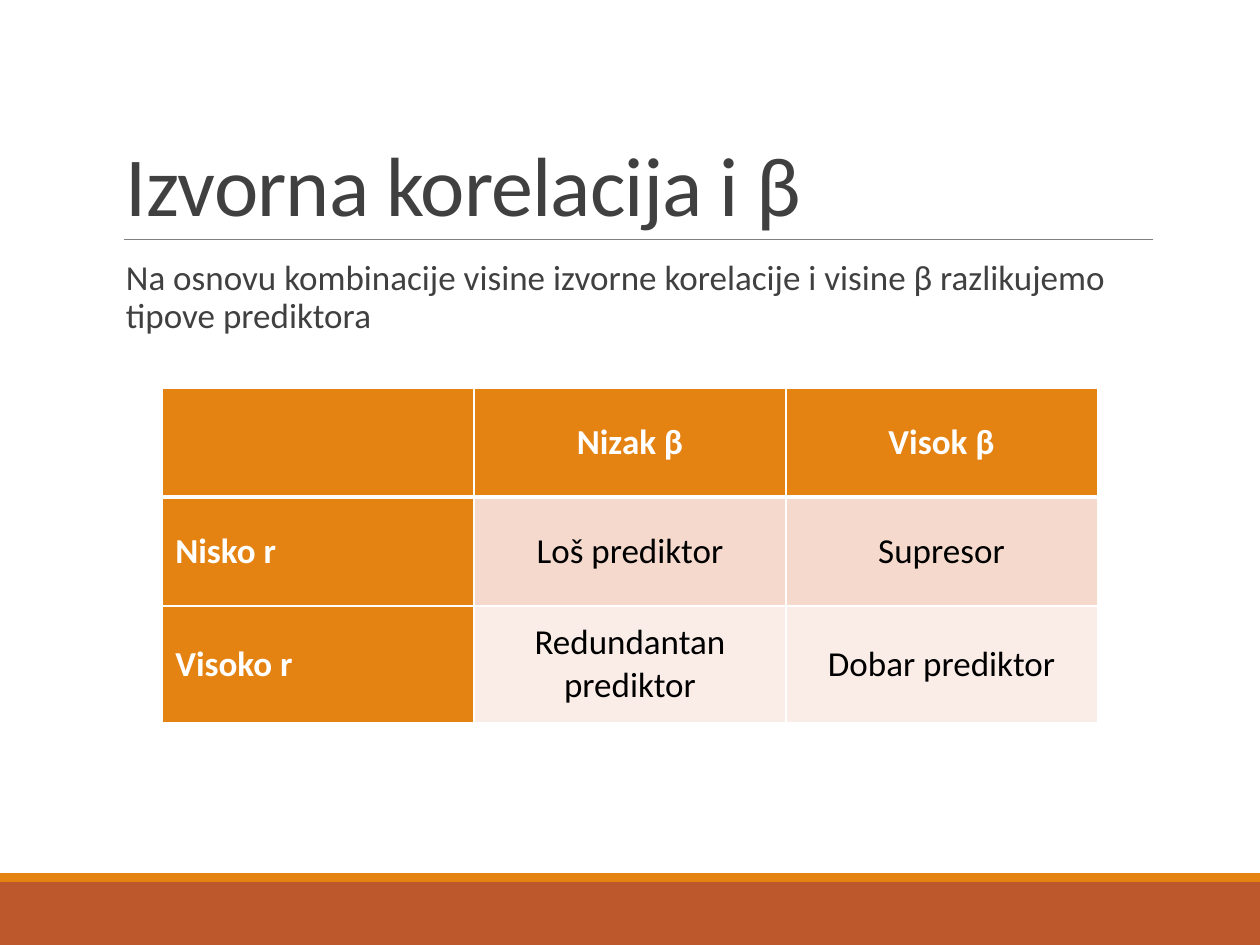
from dataclasses import dataclass

from lxml import etree
from pptx import Presentation
from pptx.dml.color import RGBColor
from pptx.enum.shapes import MSO_CONNECTOR, MSO_SHAPE
from pptx.enum.text import MSO_ANCHOR, PP_ALIGN
from pptx.oxml.ns import qn
from pptx.util import Cm, Pt

RECT = MSO_SHAPE.RECTANGLE
STRAIGHT = MSO_CONNECTOR.STRAIGHT
TOP, MIDDLE, BOTTOM = MSO_ANCHOR.TOP, MSO_ANCHOR.MIDDLE, MSO_ANCHOR.BOTTOM
LEFT, CENTER = PP_ALIGN.LEFT, PP_ALIGN.CENTER

FONT = "Calibri"
COLORS = {
    "orange": "E48312",
    "rust": "BD582C",
    "rule": "808080",
    "text": "404040",
    "white": "FFFFFF",
    "black": "000000",
    "band_dark": "F5D9CC",
    "band_light": "FAEDE7",
}


@dataclass
class Bar:
    top: float
    height: float
    color: str


@dataclass
class TextBlock:
    text: str
    top: float
    height: float
    size: float
    anchor: MSO_ANCHOR
    line_spacing: float
    space_before: float = 0
    space_after: float = 0
    tracking: int = 0  # hundredths of a point


@dataclass
class Row:
    texts: tuple[str, ...]
    height: float
    fill: str
    header: bool = False


BARS = [Bar(17.78, 1.27, "rust"), Bar(17.6, 0.18, "orange")]
BLOCKS = [
    TextBlock("Izvorna korelacija i β", 0.79, 4.04, 48, BOTTOM, 0.85, tracking=-50),
    TextBlock("Na osnovu kombinacije visine izvorne korelacije i visine β "
              "razlikujemo tipove prediktora", 5.13, 11.18, 20, TOP, 0.9, 12, 2),
]
ROWS = [
    Row(("", "Nizak β", "Visok β"), 2.2, "orange", header=True),
    Row(("Nisko r", "Loš prediktor", "Supresor"), 2.2, "band_dark"),
    Row(("Visoko r", "Redundantan prediktor", "Dobar prediktor"), 2.34, "band_light"),
]
COL_WIDTH = 6.28


def rgb(name: str) -> RGBColor:
    return RGBColor.from_string(COLORS[name])


def set_font(p, size: float, color: str, bold: bool = False) -> None:
    p.font.name = FONT
    p.font.size = Pt(size)
    p.font.bold = bold
    p.font.color.rgb = rgb(color)


def draw_bar(s, bar: Bar) -> None:
    sp = s.shapes.add_shape(RECT, 0, Cm(bar.top), Cm(25.4), Cm(bar.height))
    sp.shadow.inherit = False
    sp.fill.solid()
    sp.fill.fore_color.rgb = rgb(bar.color)
    sp.line.fill.background()


def draw_rule(s) -> None:
    line = s.shapes.add_connector(STRAIGHT, Cm(2.49), Cm(4.83), Cm(23.24), Cm(4.83))
    line.line.color.rgb = rgb("rule")
    line.line.width = Pt(0.5)
    etree.SubElement(line._element.spPr, qn("a:effectLst"))


def draw_text(s, block: TextBlock) -> None:
    sp = s.shapes.add_textbox(Cm(2.29), Cm(block.top), Cm(20.95), Cm(block.height))
    tf = sp.text_frame
    tf.word_wrap = True
    tf.vertical_anchor = block.anchor
    tf.margin_right = 0
    p = tf.paragraphs[0]
    r = p.add_run()
    r.text = block.text
    p.line_spacing = block.line_spacing
    p.space_before = Pt(block.space_before)
    p.space_after = Pt(block.space_after)
    set_font(p, block.size, "text")
    if block.tracking:
        r.font._element.set("spc", str(block.tracking))


def set_borders(cell, top: float, bottom: float) -> None:
    tc_pr = cell._tc.get_or_add_tcPr()
    for side, width in (("L", 1), ("R", 1), ("T", top), ("B", bottom)):
        ln = etree.SubElement(tc_pr, qn(f"a:ln{side}"), w=str(Pt(width)))
        fill = etree.SubElement(ln, qn("a:solidFill"))
        etree.SubElement(fill, qn("a:srgbClr"), val=COLORS["white"])


def draw_table(s, rows: list[Row]) -> None:
    n_cols = len(rows[0].texts)
    table = s.shapes.add_table(len(rows), n_cols, Cm(3.28), Cm(7.82),
                               Cm(COL_WIDTH * n_cols),
                               Cm(sum(row.height for row in rows))).table
    for col in table.columns:
        col.width = Cm(COL_WIDTH)
    for i, row in enumerate(rows):
        table.rows[i].height = Cm(row.height)
        for j, text in enumerate(row.texts):
            cell = table.cell(i, j)
            label = row.header or j == 0
            # Thick rule between the header and the first data row
            set_borders(cell, 3 if i == 1 else 1, 3 if row.header else 1)
            cell.fill.solid()
            cell.fill.fore_color.rgb = rgb("orange" if label else row.fill)
            cell.vertical_anchor = MIDDLE
            p = cell.text_frame.paragraphs[0]
            p.text = text
            p.alignment = CENTER if j else LEFT
            set_font(p, 20, "white" if label else "black", label)


def main() -> None:
    prs = Presentation()
    prs.slide_width, prs.slide_height = Cm(25.4), Cm(19.05)
    s = prs.slides.add_slide(prs.slide_layouts[6])

    # Footer bars and title rule
    for bar in BARS:
        draw_bar(s, bar)
    draw_rule(s)

    # Title and introduction
    for block in BLOCKS:
        draw_text(s, block)

    # Predictor types
    draw_table(s, ROWS)

    prs.save("out.pptx")


if __name__ == "__main__":
    main()
